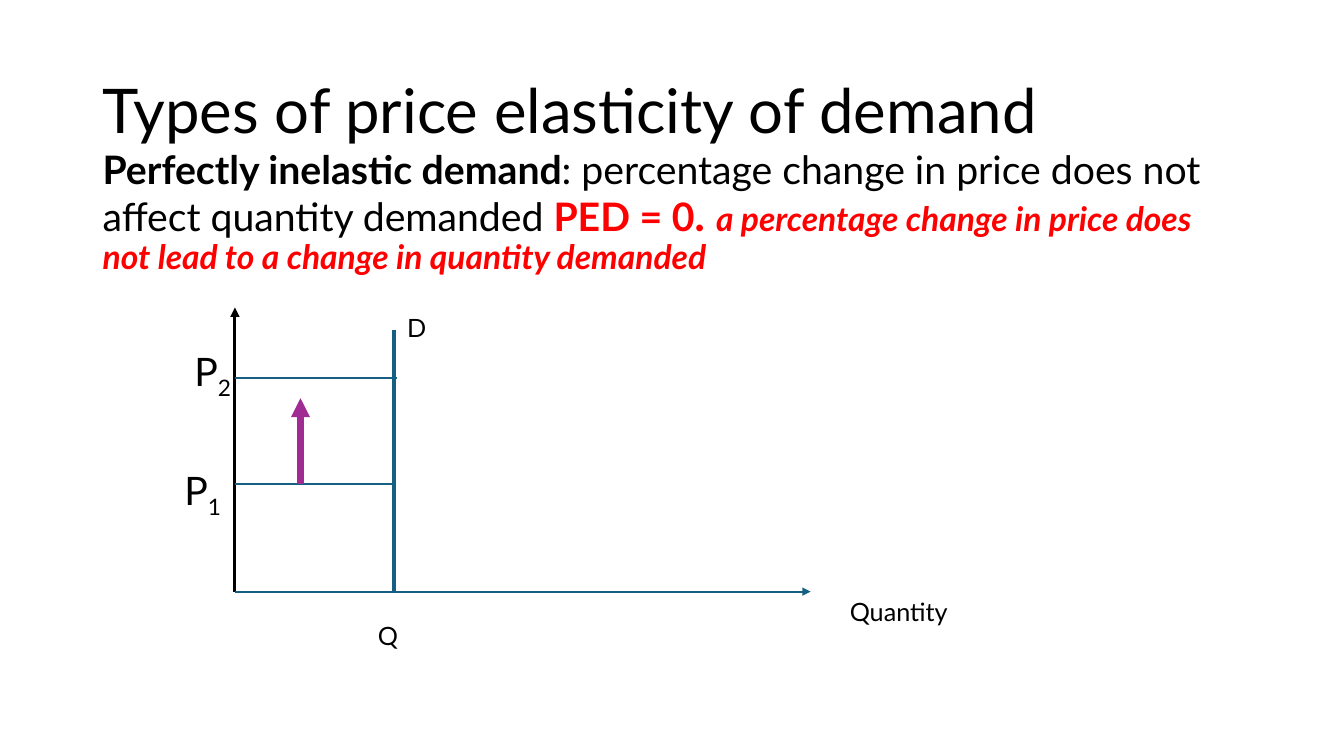
from lxml import etree
from pptx import Presentation
from pptx.dml import color
from pptx.enum import shapes, text
from pptx.oxml import ns
from pptx.util import Inches, Pt

BLACK, RED, TEAL, PURPLE = "000000", "FF0000", "156082", "A02B93"
AXIS_X, AXIS_Y, DEMAND_X = 2.33, 5.87, 3.91
PRICE_1, PRICE_2 = 4.8, 3.75


def rgb(value):
    """Turn a hex string into a colour."""
    return color.RGBColor.from_string(value)


def add_text(page, left, top, width, height, size, spans, spacing=1.0, wrap=True,
             anchor=text.MSO_ANCHOR.TOP):
    """Add one paragraph; each span is its words and a dict of font changes."""
    box = page.shapes.add_textbox(Inches(left), Inches(top), Inches(width), Inches(height))
    frame = box.text_frame
    frame.word_wrap = wrap
    frame.vertical_anchor = anchor
    para = frame.paragraphs[0]
    para.line_spacing = spacing
    para.font.name = "Lato"
    para.font.size = Pt(size)
    para.font.color.rgb = rgb(BLACK)
    for words, style in spans:
        span = para.add_run()
        span.text = words
        font = span.font
        font.name = "Lato"
        font.size = Pt(style.get("size", size))
        font.color.rgb = rgb(style.get("color", BLACK))
        font.bold = style.get("bold", False)
        font.italic = style.get("italic", False)
        if style.get("subscript"):
            span.font._element.set("baseline", "-25000")


def add_line(page, start, end, hue, weight, arrow=False):
    """Add a straight line, with an arrowhead at its end if wanted."""
    line = page.shapes.add_connector(
        shapes.MSO_CONNECTOR.STRAIGHT, *(Inches(value) for value in (*start, *end)))
    line.line.color.rgb = rgb(hue)
    line.line.width = Pt(weight)
    if arrow:
        outline = line.line._get_or_add_ln()
        etree.SubElement(outline, ns.qn("a:tailEnd"), type="triangle")
    etree.SubElement(line._element.spPr, ns.qn("a:effectLst"))


def add_price_label(page, left, top, number):
    """Add a P with a subscript number."""
    add_text(page, left, top, 0.6, 0.57, 28,
             [("P", {}), (number, {"subscript": True})], wrap=False)


def add_diagram(page):
    """Draw the axes, the demand line, the two prices and their labels."""
    origin = (AXIS_X, AXIS_Y)
    add_line(page, origin, (AXIS_X, 3.05), BLACK, 2.25, arrow=True)
    add_line(page, (DEMAND_X, 3.27), (DEMAND_X, AXIS_Y), TEAL, 3)
    add_line(page, origin, (8.04, AXIS_Y), TEAL, 1.5, arrow=True)
    add_line(page, (AXIS_X, PRICE_2), (3.94, PRICE_2), TEAL, 1.5)
    add_line(page, (AXIS_X, PRICE_1), (DEMAND_X, PRICE_1), TEAL, 1.5)
    add_line(page, (2.98, PRICE_1), (2.98, 3.95), PURPLE, 4.5, arrow=True)
    add_price_label(page, 1.83, 3.4, "2")
    add_price_label(page, 1.73, 4.58, "1")
    add_text(page, 8.33, AXIS_Y, 2.33, 0.4, 18, [("Quantity", {})])
    add_text(page, 3.94, 3.05, 0.38, 0.4, 18, [("D", {})], wrap=False)
    add_text(page, 3.65, 6.11, 0.44, 0.4, 18, [("Q", {})])


def main():
    """Build the slide and save it."""
    deck = Presentation()
    deck.slide_width, deck.slide_height = Inches(13.33), Inches(7.5)
    page = deck.slides.add_slide(deck.slide_layouts[6])
    add_text(page, 0.92, 0.4, 11.5, 1.45, 44,
             [("Types of price elasticity of demand", {})],
             spacing=0.9, anchor=text.MSO_ANCHOR.MIDDLE)
    strong = {"color": RED, "bold": True}
    add_text(page, 0.92, 1.44, 11.5, 1.45, 28, [
        ("Perfectly inelastic demand", {"bold": True}),
        (": percentage change in price does not affect quantity demanded ", {}),
        ("PED = 0", strong),
        (". ", {**strong, "size": 32}),
        ("a percentage change in price does not lead to a change in quantity demanded",
         {**strong, "size": 24, "italic": True}),
    ], spacing=0.9)
    add_diagram(page)
    deck.save("out.pptx")


if __name__ == "__main__":
    main()
